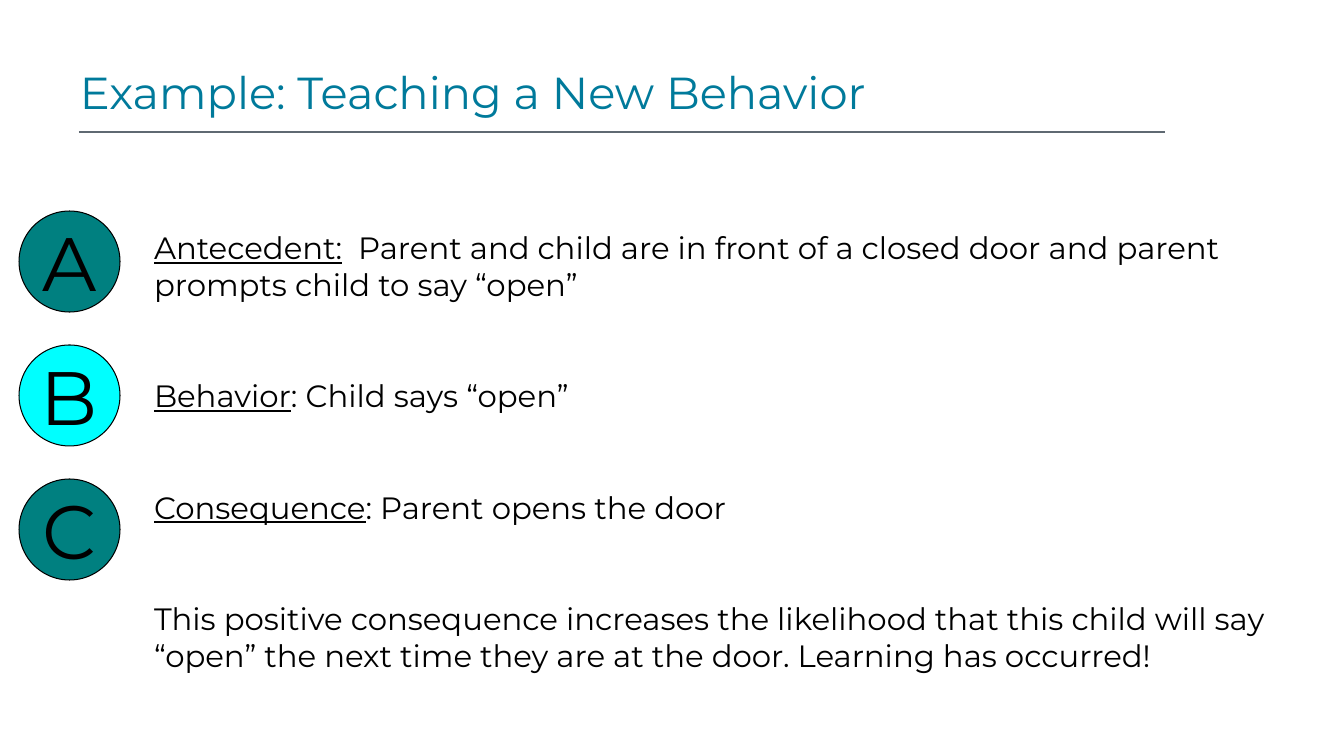
"""Build a slide on the antecedent, behavior and consequence of learning."""
import pptx
import pptx.dml.color
import pptx.enum.shapes
import pptx.enum.text
import pptx.oxml.ns
import pptx.util
import lxml.etree

SCALE = 914400 / 100.8
ANCHOR = pptx.enum.text.MSO_ANCHOR


def px(*nums):
    return [pptx.util.Emu(round(n * SCALE)) for n in nums]


def paint(target, code):
    target.rgb = pptx.dml.color.RGBColor.from_string(code)


deck = pptx.Presentation()
deck.slide_width, deck.slide_height = px(1344, 756)
slide = deck.slides.add_slide(deck.slide_layouts[6])
shapes = slide.shapes

rule = shapes.add_connector(
    pptx.enum.shapes.MSO_CONNECTOR.STRAIGHT, *px(79, 132, 1165, 132))
paint(rule.line.color, "5F6972")
rule.line.width = pptx.util.Pt(1.5)
props = rule._element.spPr
lxml.etree.SubElement(props, pptx.oxml.ns.qn("a:effectLst"))

title = shapes.add_textbox(*px(70, 55, 1162, 68)).text_frame
title.word_wrap = True
title.vertical_anchor = ANCHOR.BOTTOM
para = title.paragraphs[0]
para.line_spacing = pptx.util.Pt(40)
run = para.add_run()
run.text = "Example: Teaching a New Behavior"
run.font.name = "Montserrat"
run.font.size = pptx.util.Pt(32)
paint(run.font.color, "007A9B")

steps = [
    ("Antecedent:", "  Parent and child are in front of a closed door and parent "
     "prompts child to say “open”"),
    ("Behavior", ": Child says “open”"),
    ("Consequence", ": Parent opens the door"),
    ("", "This positive consequence increases the likelihood that this child "
     "will say “open” the next time they are at the door. "
     "Learning has occurred!"),
]
body = shapes.add_textbox(*px(154, 229, 1154, 446)).text_frame
body.word_wrap = True
body.margin_left = body.margin_right = 0
body.margin_top = body.margin_bottom = 0
for i, (term, rest) in enumerate(steps):
    para = body.add_paragraph() if i else body.paragraphs[0]
    if i:
        para.space_before = pptx.util.Pt(53)
    for text, under in ((term, True), (rest, False)):
        if text:
            run = para.add_run()
            run.text = text
            run.font.name = "Montserrat"
            run.font.size = pptx.util.Pt(22)
            run.font.underline = under
            paint(run.font.color, "000000")

badges = [("A", "008080"), ("B", "00FFFF"), ("C", "008080")]
for i, (mark, fill) in enumerate(badges):
    disc = shapes.add_shape(
        pptx.enum.shapes.MSO_SHAPE.OVAL, *px(19, 211 + 134 * i, 101, 101))
    disc.shadow.inherit = False
    disc.fill.solid()
    paint(disc.fill.fore_color, fill)
    paint(disc.line.color, "000000")
    disc.line.width = pptx.util.Pt(0.75)
    frame = disc.text_frame
    frame.word_wrap = False
    frame.vertical_anchor = ANCHOR.MIDDLE
    para = frame.paragraphs[0]
    para.alignment = pptx.enum.text.PP_ALIGN.CENTER
    run = para.add_run()
    run.text = mark
    run.font.name = "Montserrat"
    run.font.size = pptx.util.Pt(54)
    paint(run.font.color, "000000")

deck.save("out.pptx")
